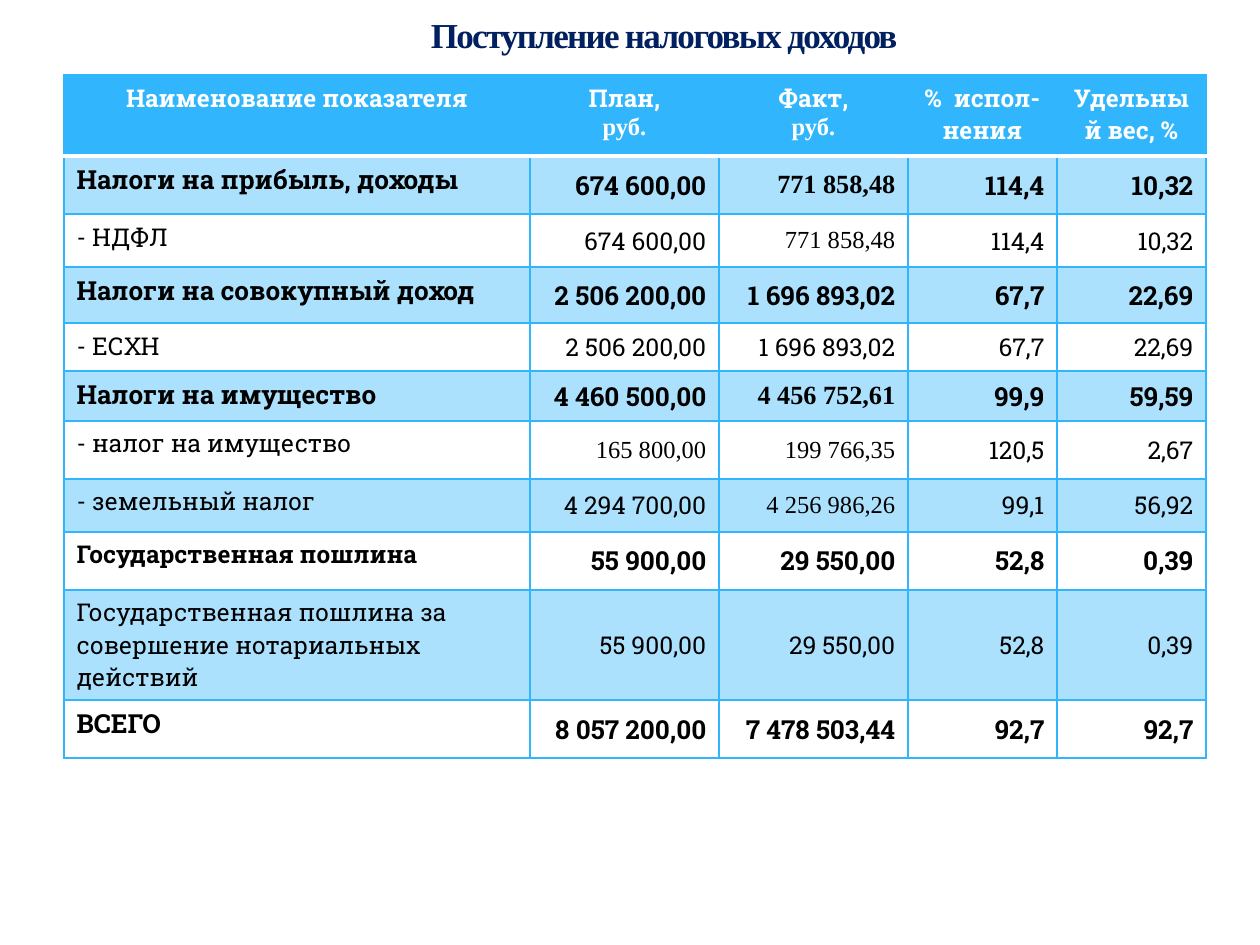
from dataclasses import dataclass

from lxml import etree
from pptx import Presentation
from pptx import util as u
from pptx.dml.color import RGBColor
from pptx.enum import text
from pptx.oxml import ns


@dataclass(frozen=True)
class Theme:
    accent: str = "31B6FD"
    white: str = "FFFFFF"
    ink: str = "000000"
    navy: str = "002060"
    slab: str = "Roboto Slab"
    serif: str = "Times New Roman"
    title: int = 20
    strong: int = 15
    body: int = 14
    band_alpha: int = 40


@dataclass(frozen=True)
class Row:
    height: int
    values: tuple
    total: bool = False
    serif: tuple = ()
    label_size: int = 0


HEADINGS = ["Наименование показателя", "План,\nруб.", "Факт,\nруб.", "%  испол-нения", "Удельный вес, %"]
HEADING_HEIGHT = 81
COLUMN_WIDTHS = [466, 189, 189, 149, 149]
REVENUES = [
    Row(58, ("Налоги на прибыль, доходы", "674 600,00", "771 858,48", "114,4", "10,32"), True, (2,)),
    Row(53, ("- НДФЛ", "674 600,00", "771 858,48", "114,4", "10,32"), serif=(2,)),
    Row(56, ("Налоги на совокупный доход", "2 506 200,00", "1 696 893,02", "67,7", "22,69"), True),
    Row(48, ("- ЕСХН", "2 506 200,00", "1 696 893,02", "67,7", "22,69")),
    Row(50, ("Налоги на имущество", "4 460 500,00", "4 456 752,61", "99,9", "59,59"), True, (2,)),
    Row(58, ("- налог на имущество", "165 800,00", "199 766,35", "120,5", "2,67"), serif=(1, 2)),
    Row(53, ("- земельный налог", "4 294 700,00", "4 256 986,26", "99,1", "56,92"), serif=(2,)),
    Row(58, ("Государственная пошлина", "55 900,00", "29 550,00", "52,8", "0,39"), True, label_size=14),
    Row(81, ("Государственная пошлина за совершение нотариальных действий",
             "55 900,00", "29 550,00", "52,8", "0,39")),
    Row(58, ("ВСЕГО", "8 057 200,00", "7 478 503,44", "92,7", "92,7"), True),
]


class Deck:
    def __init__(self, theme):
        self.theme = theme
        self.prs = Presentation()
        self.prs.slide_width, self.prs.slide_height = u.Inches(10), u.Inches(7.5)
        self.slide = self.prs.slides.add_slide(self.prs.slide_layouts[5])

    def px(self, length):
        return u.Emu(round(length * u.Inches(1) / 126))

    def style(self, paragraph, font, size, color, bold, align):
        paragraph.alignment = align
        paragraph.font.name = font
        paragraph.font.size = u.Pt(size)
        paragraph.font.bold = bold
        paragraph.font.color.rgb = RGBColor.from_string(color)

    def title(self, wording, left, top, width, height):
        heading = self.slide.shapes.title
        heading.left, heading.top, heading.width, heading.height = map(self.px, (left, top, width, height))
        frame = heading.text_frame
        frame.text = wording
        frame.vertical_anchor = text.MSO_ANCHOR.MIDDLE
        paragraph = frame.paragraphs[0]
        self.style(paragraph, self.theme.serif, self.theme.title, self.theme.navy, True, text.PP_ALIGN.CENTER)
        paragraph.runs[0].font._element.set("spc", "-100")

    def fill(self, cell, alpha):
        if not alpha:
            cell.fill.background()
            return
        cell.fill.solid()
        cell.fill.fore_color.rgb = RGBColor.from_string(self.theme.accent)
        if alpha < 100:
            color = cell._tc.tcPr.find(".//" + ns.qn("a:srgbClr"))
            etree.SubElement(color, ns.qn("a:alpha"), val=str(alpha * 1000))

    def borders(self, cell, **special):
        for index, side in enumerate("LRTB"):
            color, width = special.get(side, (self.theme.accent, 1))
            line = etree.Element(ns.qn(f"a:ln{side}"), w=str(u.Pt(width)))
            solid = etree.SubElement(line, ns.qn("a:solidFill"))
            etree.SubElement(solid, ns.qn("a:srgbClr"), val=color)
            cell._tc.tcPr.insert(index, line)

    def table(self, left, top, widths, headings, heading_height, rows):
        theme = self.theme
        heights = [heading_height] + [row.height for row in rows]
        frame = self.slide.shapes.add_table(
            len(heights), len(widths), *map(self.px, (left, top, sum(widths), sum(heights))))
        grid = frame.table
        grid.first_row = grid.horz_banding = False
        for column, width in zip(grid.columns, widths):
            column.width = self.px(width)
        for line, height in zip(grid.rows, heights):
            line.height = self.px(height)
        divider = (theme.white, 3)
        for col, heading in enumerate(headings):
            cell = grid.cell(0, col)
            cell.text = heading
            for number, paragraph in enumerate(cell.text_frame.paragraphs):
                self.style(paragraph, theme.serif if number else theme.slab, theme.body,
                           theme.white, True, text.PP_ALIGN.CENTER)
            self.fill(cell, 100)
            self.borders(cell, B=divider)
        for number, row in enumerate(rows, 1):
            for col, value in enumerate(row.values):
                cell = grid.cell(number, col)
                cell.text = value
                size = theme.strong if row.total else theme.body
                if col == 0:
                    size = row.label_size or size
                else:
                    cell.vertical_anchor = text.MSO_ANCHOR.MIDDLE
                self.style(cell.text_frame.paragraphs[0],
                           theme.serif if col in row.serif else theme.slab, size, theme.ink, row.total,
                           text.PP_ALIGN.RIGHT if col else text.PP_ALIGN.LEFT)
                self.fill(cell, theme.band_alpha if number % 2 else 0)
                self.borders(cell, **({"T": divider} if number == 1 else {}))


def main():
    deck = Deck(Theme())
    deck.title("Поступление налоговых доходов", 203, 0, 922, 69)
    deck.table(64, 75, COLUMN_WIDTHS, HEADINGS, HEADING_HEIGHT, REVENUES)
    deck.prs.save("out.pptx")


if __name__ == "__main__":
    main()
